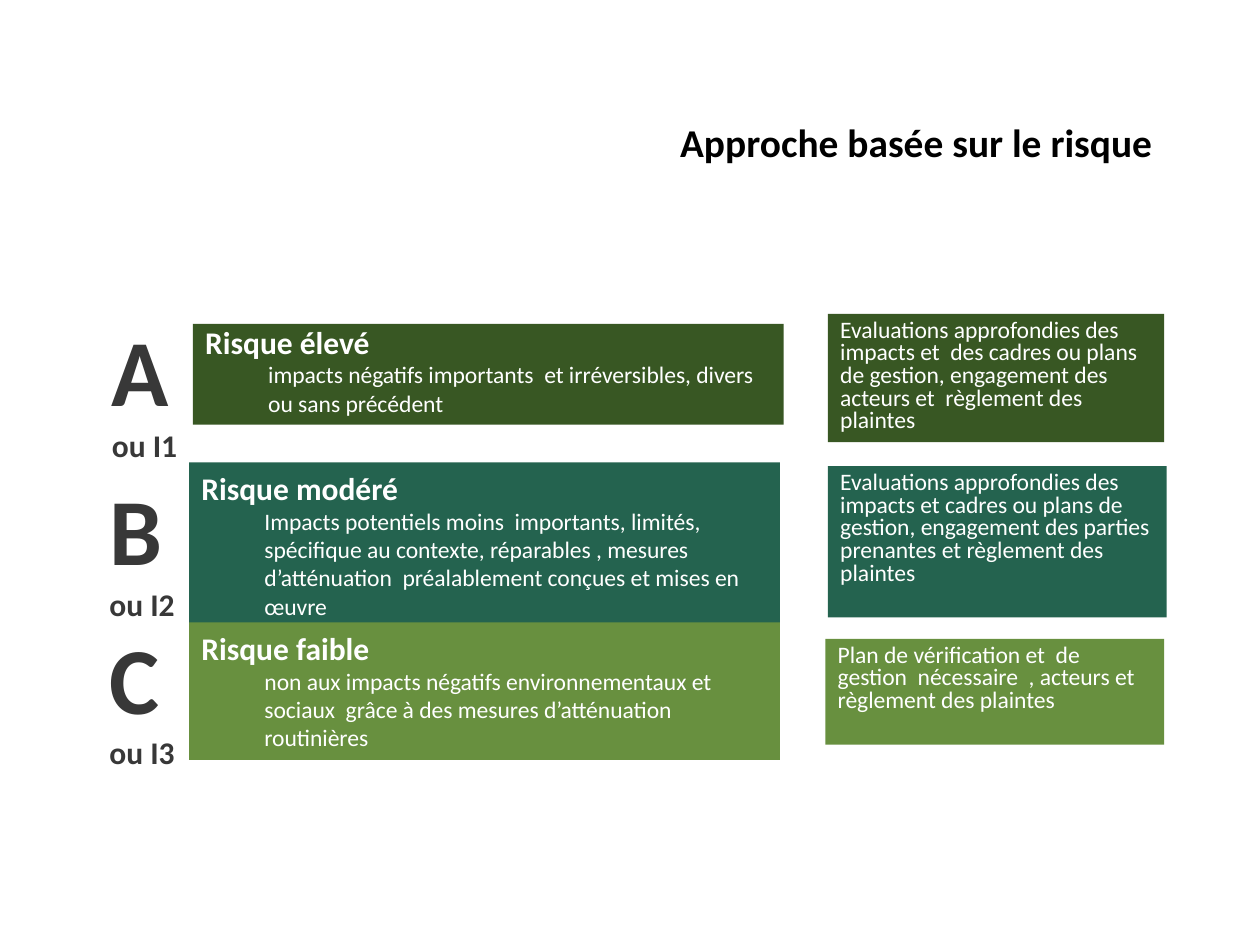
from dataclasses import dataclass

from pptx import Presentation
from pptx.dml.color import RGBColor
from pptx.enum.shapes import MSO_SHAPE
from pptx.enum.text import MSO_ANCHOR, PP_ALIGN
from pptx.util import Inches, Pt

RECT = MSO_SHAPE.RECTANGLE
TOP, MIDDLE = MSO_ANCHOR.TOP, MSO_ANCHOR.MIDDLE
LEFT, RIGHT = PP_ALIGN.LEFT, PP_ALIGN.RIGHT
FONT = "Calibri"
WHITE, GREY, BLACK = "FFFFFF", "383838", "000000"
TITLE = {"size": Pt(22.5), "bold": True}
LETTER = {"size": Pt(54), "bold": True}
HEAD = {"size": Pt(18), "bold": True}
BODY = {"size": Pt(13.5), "bold": False}
TIGHT = 0.8

Box = tuple[float, float, float, float]


@dataclass
class Risk:
    letter: str
    code: str
    name: str
    impact: str
    action: str
    fill: str
    label_at: Box
    risk_at: Box
    action_at: Box
    spacing: float | None = None


RISKS = [
    Risk("A", "ou I1", "Risque élevé",
         "impacts négatifs importants  et irréversibles, divers ou sans précédent",
         "Evaluations approfondies des impacts et  des cadres ou plans de gestion, "
         "engagement des acteurs et  règlement des plaintes",
         "385723", (0.79, 2.43, 0.73, 1.31), (1.53, 2.57, 4.69, 0.8),
         (6.57, 2.49, 2.67, 1.02), TIGHT),
    Risk("B", "ou I2", "Risque modéré",
         "Impacts potentiels moins  importants, limités, spécifique au contexte, "
         "réparables , mesures  d’atténuation  préalablement conçues et mises en œuvre",
         "Evaluations approfondies des impacts et cadres ou plans de gestion, "
         "engagement des parties prenantes et règlement des plaintes",
         "24634F", (0.77, 3.69, 0.73, 1.31), (1.5, 3.67, 4.69, 1.31),
         (6.57, 3.7, 2.69, 1.2)),
    Risk("C", "ou I3", "Risque faible",
         "non aux impacts négatifs environnementaux et sociaux  grâce à des mesures "
         "d’atténuation routinières",
         "Plan de vérification et  de gestion  nécessaire  , acteurs et règlement des plaintes",
         "68903F", (0.77, 4.87, 0.73, 1.31), (1.5, 4.94, 4.69, 1.09),
         (6.55, 5.07, 2.69, 0.84)),
]


def color(value: str) -> RGBColor:
    return RGBColor.from_string(value)


def place(at: Box) -> list[int]:
    return [Inches(value) for value in at]


def write(para, text: str, style: dict, ink: str, align=LEFT, spacing=None) -> None:
    para.text = text
    para.alignment = align
    para.line_spacing = spacing
    for key, value in style.items():
        setattr(para.font, key, value)
    para.font.name = FONT
    para.font.color.rgb = color(ink)


def add_panel(slide, at: Box, fill: str):
    """Add a filled rectangle and return its text frame."""
    panel = slide.shapes.add_shape(RECT, *place(at))
    panel.shadow.inherit = False
    panel.fill.solid()
    panel.fill.fore_color.rgb = color(fill)
    panel.line.fill.background()
    frame = panel.text_frame
    frame.word_wrap = True
    frame.vertical_anchor = TOP
    return frame


def add_risk(slide, risk: Risk) -> None:
    frame = add_panel(slide, risk.risk_at, risk.fill)
    write(frame.paragraphs[0], risk.name, HEAD, WHITE, spacing=risk.spacing)
    para = frame.add_paragraph()
    para.level = 1
    props = para._p.get_or_add_pPr()
    props.set("marL", str(Inches(0.5)))
    props.set("indent", "0")
    write(para, risk.impact, BODY, WHITE)

    frame = slide.shapes.add_textbox(*place(risk.label_at)).text_frame
    frame.word_wrap = True
    frame.margin_right = 0
    write(frame.paragraphs[0], risk.letter, LETTER, GREY)
    write(frame.add_paragraph(), risk.code, HEAD, GREY)

    frame = add_panel(slide, risk.action_at, risk.fill)
    write(frame.paragraphs[0], risk.action, BODY, WHITE, spacing=TIGHT)


def add_title(slide, text: str) -> None:
    title = slide.shapes.title
    title.left, title.top, title.width, title.height = place((2.07, 0.85, 7.18, 0.62))
    title.text_frame.vertical_anchor = MIDDLE
    write(title.text_frame.paragraphs[0], text, TITLE, BLACK, RIGHT, TIGHT)


def main() -> None:
    deck = Presentation()
    deck.slide_width, deck.slide_height = Inches(10), Inches(7.5)
    slide = deck.slides.add_slide(deck.slide_layouts[5])
    add_title(slide, "Approche basée sur le risque")
    for risk in RISKS:
        add_risk(slide, risk)
    deck.save("out.pptx")


if __name__ == "__main__":
    main()
